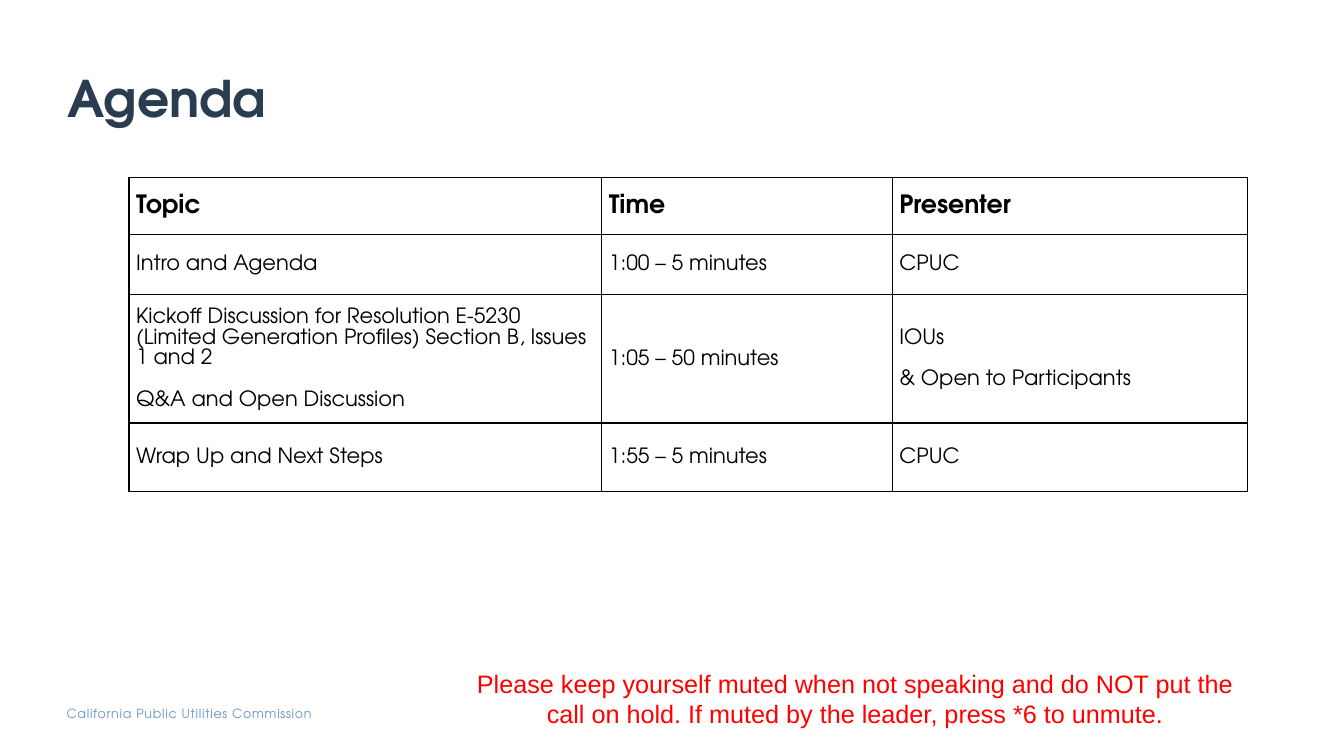
import pptx
import pptx.dml.color
import pptx.enum.text
import pptx.oxml
import pptx.oxml.ns
import pptx.util
from pptx.util import Inches

ANCHOR = pptx.enum.text.MSO_ANCHOR
ALIGN = pptx.enum.text.PP_ALIGN
BRAND_FONT = "TeX Gyre Adventor"

COLUMN_WIDTHS = [4.69, 2.88, 3.52]
ROW_HEIGHTS = [0.57, 0.59, 1.03, 0.68]
AGENDA = [
    [["Topic"], ["Time"], ["Presenter"]],
    [["Intro and Agenda"], ["1:00 – 5 minutes"], ["CPUC"]],
    [
        [
            "Kickoff Discussion for Resolution E-5230 (Limited Generation Profiles) "
            "Section B, Issues 1 and 2",
            "Q&A and Open Discussion",
        ],
        ["1:05 – 50 minutes"],
        ["IOUs", "& Open to Participants"],
    ],
    [["Wrap Up and Next Steps"], ["1:55 – 5 minutes"], ["CPUC"]],
]


def style_font(paragraph, size, color, name=BRAND_FONT, bold=False):
    font = paragraph.font
    font.name = name
    font.size = pptx.util.Pt(size)
    font.bold = bold
    font.color.rgb = pptx.dml.color.RGBColor.from_string(color)


def set_margins(frame, left, top, right, bottom):
    frame.margin_left, frame.margin_top = Inches(left), Inches(top)
    frame.margin_right, frame.margin_bottom = Inches(right), Inches(bottom)


def place(shape, left, top, width, height):
    shape.left, shape.top = Inches(left), Inches(top)
    shape.width, shape.height = Inches(width), Inches(height)


def add_title(slide, text):
    title = slide.shapes.title
    place(title, 0.67, 0.66, 12, 0.66)
    frame = title.text_frame
    frame.text = text
    frame.auto_size = pptx.enum.text.MSO_AUTO_SIZE.NONE
    frame.vertical_anchor = ANCHOR.BOTTOM
    set_margins(frame, 0, 0.05, 0.1, 0.05)
    paragraph = frame.paragraphs[0]
    paragraph.alignment = ALIGN.LEFT
    paragraph.line_spacing = 0.9
    style_font(paragraph, 36, "2A3C50", bold=True)


def add_text(slide, text, left, top, width, height):
    """Add a wrapping text box and return its text frame."""
    box = slide.shapes.add_textbox(
        Inches(left), Inches(top), Inches(width), Inches(height))
    frame = box.text_frame
    frame.word_wrap = True
    frame.text = text
    return frame


def add_footer(slide, text):
    frame = add_text(slide, text, 0.66, 7, 3.21, 0.15)
    set_margins(frame, 0, 0, 0, 0)
    paragraph = frame.paragraphs[0]
    style_font(paragraph, 9, "6996C9")
    paragraph.runs[0]._r.get_or_add_rPr().set("spc", "50")


def add_notice(slide, text):
    frame = add_text(slide, text, 4.44, 6.58, 8.08, 0.52)
    paragraph = frame.paragraphs[0]
    paragraph.alignment = ALIGN.CENTER
    style_font(paragraph, 18, "FF0000", name="Arial")


def add_borders(cell, color="000000", points=1):
    properties = cell._tc.get_or_add_tcPr()
    for index, side in enumerate(["lnL", "lnR", "lnT", "lnB"]):
        properties.insert(index, pptx.oxml.parse_xml(
            f'<a:{side} {pptx.oxml.ns.nsdecls("a")} w="{pptx.util.Pt(points)}">'
            f'<a:solidFill><a:srgbClr val="{color}"/></a:solidFill></a:{side}>'))


def fill_cell(cell, lines, is_header):
    cell.fill.background()
    cell.vertical_anchor = ANCHOR.MIDDLE
    set_margins(cell, 0.07, 0, 0.07, 0)
    add_borders(cell)
    cell.text = "\n".join(lines)
    for index, paragraph in enumerate(cell.text_frame.paragraphs):
        if not is_header:
            paragraph.line_spacing = 1.07
        if index:
            paragraph.space_before = pptx.util.Pt(15)
        style_font(paragraph, 18 if is_header else 15, "000000", bold=is_header)


def add_agenda(slide):
    table = slide.shapes.add_table(
        len(ROW_HEIGHTS), len(COLUMN_WIDTHS), Inches(1.28), Inches(1.76),
        Inches(sum(COLUMN_WIDTHS)), Inches(sum(ROW_HEIGHTS))).table
    table.horz_banding = False
    for column, width in zip(table.columns, COLUMN_WIDTHS):
        column.width = Inches(width)
    for row_index, (row, height) in enumerate(zip(table.rows, ROW_HEIGHTS)):
        row.height = Inches(height)
        for cell, lines in zip(row.cells, AGENDA[row_index]):
            fill_cell(cell, lines, is_header=row_index == 0)


def main():
    presentation = pptx.Presentation()
    presentation.slide_width = Inches(13.33)
    presentation.slide_height = Inches(7.5)
    slide = presentation.slides.add_slide(presentation.slide_layouts[5])
    add_footer(slide, "California Public Utilities Commission")
    add_title(slide, "Agenda")
    add_agenda(slide)
    add_notice(slide, "Please keep yourself muted when not speaking and do NOT put "
                      "the call on hold. If muted by the leader, press *6 to unmute.")
    presentation.save("out.pptx")


if __name__ == "__main__":
    main()
